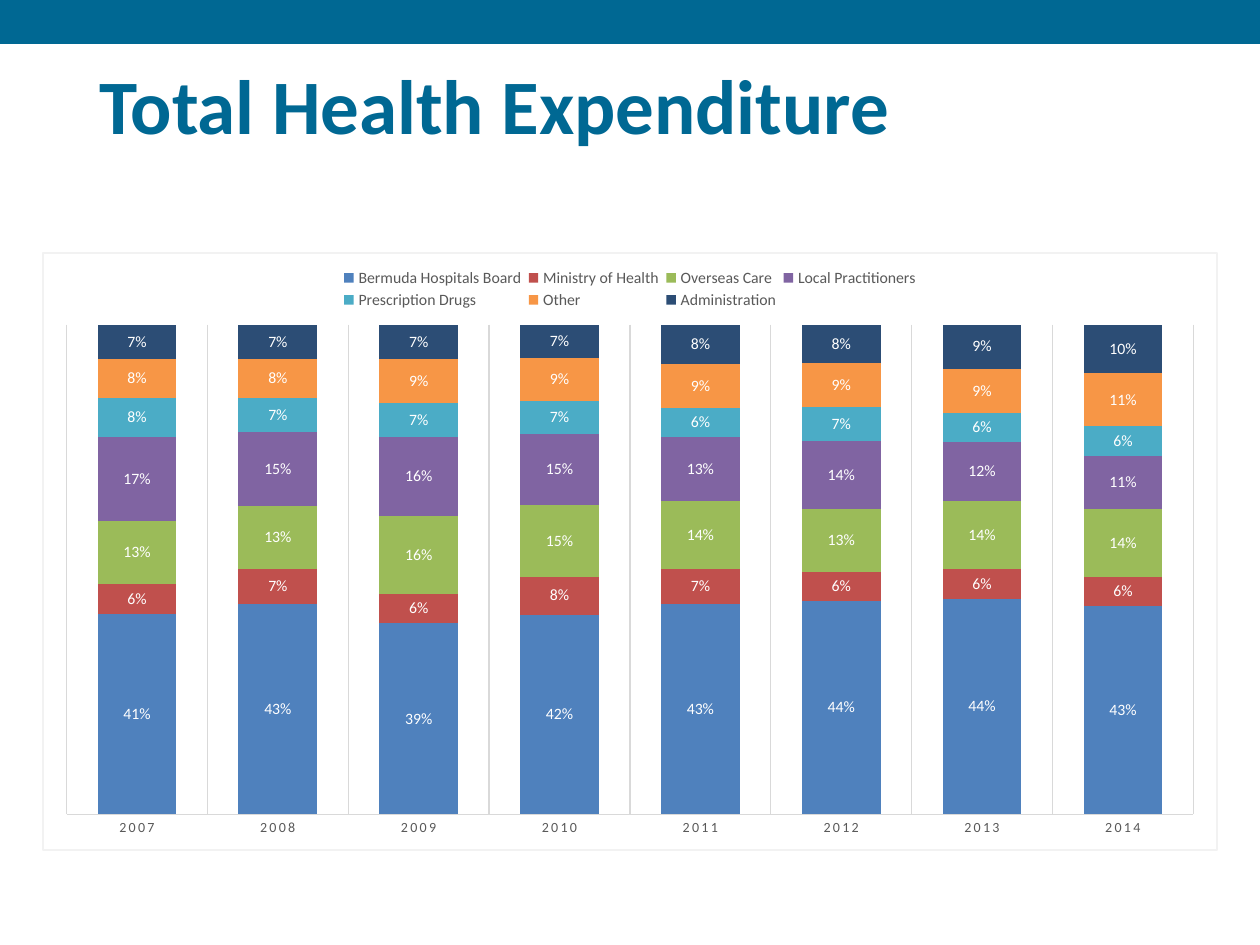
from lxml import etree
from pptx import Presentation
from pptx.chart.data import CategoryChartData
from pptx.dml.color import RGBColor
from pptx.enum.chart import XL_CHART_TYPE, XL_LABEL_POSITION, XL_LEGEND_POSITION, XL_TICK_MARK
from pptx.enum.shapes import MSO_SHAPE
from pptx.enum.text import MSO_ANCHOR, MSO_AUTO_SIZE, PP_ALIGN
from pptx.oxml import parse_xml
from pptx.oxml.ns import nsdecls, qn
from pptx.util import Pt

STACKED = XL_CHART_TYPE.COLUMN_STACKED_100
CENTER = XL_LABEL_POSITION.CENTER
LEGEND_TOP = XL_LEGEND_POSITION.TOP
NO_TICK = XL_TICK_MARK.NONE
RECTANGLE = MSO_SHAPE.RECTANGLE
TOP = MSO_ANCHOR.TOP
NO_FIT = MSO_AUTO_SIZE.NONE
LEFT = PP_ALIGN.LEFT

TITLE_ONLY = 5
TEAL, WHITE, GRAY, RULE, FRAME = "006893", "FFFFFF", "595959", "D9D9D9", "F2F2F2"

YEARS = [str(year) for year in range(2007, 2015)]
# Name, colour and share of spending in percent for each year
SPENDING = [
    ("Bermuda Hospitals Board", "4F81BD", [41, 43, 39, 42, 43, 44, 44, 43]),
    ("Ministry of Health", "C0504D", [6, 7, 6, 8, 7, 6, 6, 6]),
    ("Overseas Care", "9BBB59", [13, 13, 16, 15, 14, 13, 14, 14]),
    ("Local Practitioners", "8064A2", [17, 15, 16, 15, 13, 14, 12, 11]),
    ("Prescription Drugs", "4BACC6", [8, 7, 7, 7, 6, 7, 6, 6]),
    ("Other", "F79646", [8, 8, 9, 9, 9, 9, 9, 11]),
    ("Administration", "2C4D75", [7, 7, 7, 7, 8, 8, 9, 10]),
]


def rgb(color):
    return RGBColor.from_string(color)


def style_font(font, size, color, name, bold=False):
    font.size = Pt(size)
    font.name = name
    font.bold = bold
    font.color.rgb = rgb(color)


def style_line(line, color, width):
    line.color.rgb = rgb(color)
    line.width = Pt(width)


def write(frame, text, align=LEFT, **style):
    para = frame.paragraphs[0]
    para.alignment = align
    span = para.add_run()
    span.text = text
    style_font(span.font, **style)


def manual_layout(x, y, width, height, inner=False):
    """Return a chart layout element; lengths are fractions of the chart."""
    layout = etree.Element(qn("c:layout"))
    manual = etree.SubElement(layout, qn("c:manualLayout"))
    settings = [("layoutTarget", "inner")] if inner else []
    settings += [("xMode", "edge"), ("yMode", "edge"),
                 ("x", x), ("y", y), ("w", width), ("h", height)]
    for tag, value in settings:
        etree.SubElement(manual, qn(f"c:{tag}")).set("val", str(value))
    return layout


class SlideBuilder:
    def __init__(self, page, font_name):
        self.page = page
        self.font_name = font_name

    def band(self, left, top, width, height, color):
        box = self.page.shapes.add_shape(RECTANGLE, Pt(left), Pt(top), Pt(width), Pt(height))
        box.shadow.inherit = False
        box.fill.solid()
        box.fill.fore_color.rgb = rgb(color)
        style_line(box.line, color, 2)

    def title(self, text, left, top, width, height, size, color):
        box = self.page.shapes.title
        box.left, box.top, box.width, box.height = Pt(left), Pt(top), Pt(width), Pt(height)
        frame = box.text_frame
        frame.word_wrap = True
        frame.auto_size = NO_FIT
        frame.vertical_anchor = TOP
        write(frame, text, size=size, color=color, name=self.font_name, bold=True)

    def stacked_chart(self, left, top, width, height):
        data = CategoryChartData(number_format="0%")
        data.categories = YEARS
        for name, _, shares in SPENDING:
            data.add_series(name, [share / 100 for share in shares])
        chart = self.page.shapes.add_chart(
            STACKED, Pt(left), Pt(top), Pt(width), Pt(height), data).chart
        chart.has_title = False
        style_font(chart.font, 10, "000000", self.font_name)
        self.columns(chart.plots[0])
        self.axes(chart)
        self.legend(chart)
        self.chart_frame(chart)

    def columns(self, plot):
        plot.gap_width = 79
        plot.overlap = 100
        plot.vary_by_categories = False
        for series, (_, color, _) in zip(plot.series, SPENDING):
            series.format.fill.solid()
            series.format.fill.fore_color.rgb = rgb(color)
            labels = series.data_labels
            labels.show_value = True
            labels.position = CENTER
            labels.number_format = "0%"
            labels.number_format_is_linked = False
            style_font(labels.font, 9, WHITE, self.font_name)

    def axes(self, chart):
        years = chart.category_axis
        years.major_tick_mark = years.minor_tick_mark = NO_TICK
        years.has_major_gridlines = True
        style_line(years.major_gridlines.format.line, RULE, 0.75)
        style_line(years.format.line, RULE, 0.75)
        style_font(years.tick_labels.font, 8, GRAY, self.font_name)
        for properties in years.tick_labels.font._element.iter(qn("a:defRPr")):
            properties.set("spc", "120")
        shares = chart.value_axis
        shares.visible = False
        shares.has_major_gridlines = False
        shares.minimum_scale, shares.maximum_scale = 0, 1
        shares.major_unit = 0.2

    def legend(self, chart):
        chart.has_legend = True
        legend = chart.legend
        legend.position = LEGEND_TOP
        legend.include_in_layout = False
        style_font(legend.font, 9, GRAY, self.font_name)
        space = chart.element
        for old in space.findall(".//" + qn("c:layout")):
            old.getparent().remove(old)
        position = space.find(".//" + qn("c:legendPos"))
        position.addnext(manual_layout(0.25, 0.02, 0.5, 0.08))
        plot_area = space.find(".//" + qn("c:plotArea"))
        plot_area.insert(0, manual_layout(0.02, 0.12, 0.96, 0.82, inner=True))

    def chart_frame(self, chart):
        space = chart.element
        space.find(qn("c:chart")).addnext(parse_xml(
            f'<c:spPr {nsdecls("c", "a")}>'
            f'<a:solidFill><a:srgbClr val="{WHITE}"/></a:solidFill>'
            f'<a:ln w="{Pt(1.25)}"><a:solidFill><a:srgbClr val="{FRAME}"/></a:solidFill></a:ln>'
            '</c:spPr>'))


def main():
    deck = Presentation()
    deck.slide_width, deck.slide_height = Pt(720), Pt(540)
    page = deck.slides.add_slide(deck.slide_layouts[TITLE_ONLY])
    builder = SlideBuilder(page, "Calibri")
    builder.band(0, 0, 720, 24, TEAL)
    builder.title("Total Health Expenditure", 49.5, 29, 621, 104, size=44, color=TEAL)
    builder.stacked_chart(24, 144, 672, 342.5)
    deck.save("out.pptx")


if __name__ == "__main__":
    main()
